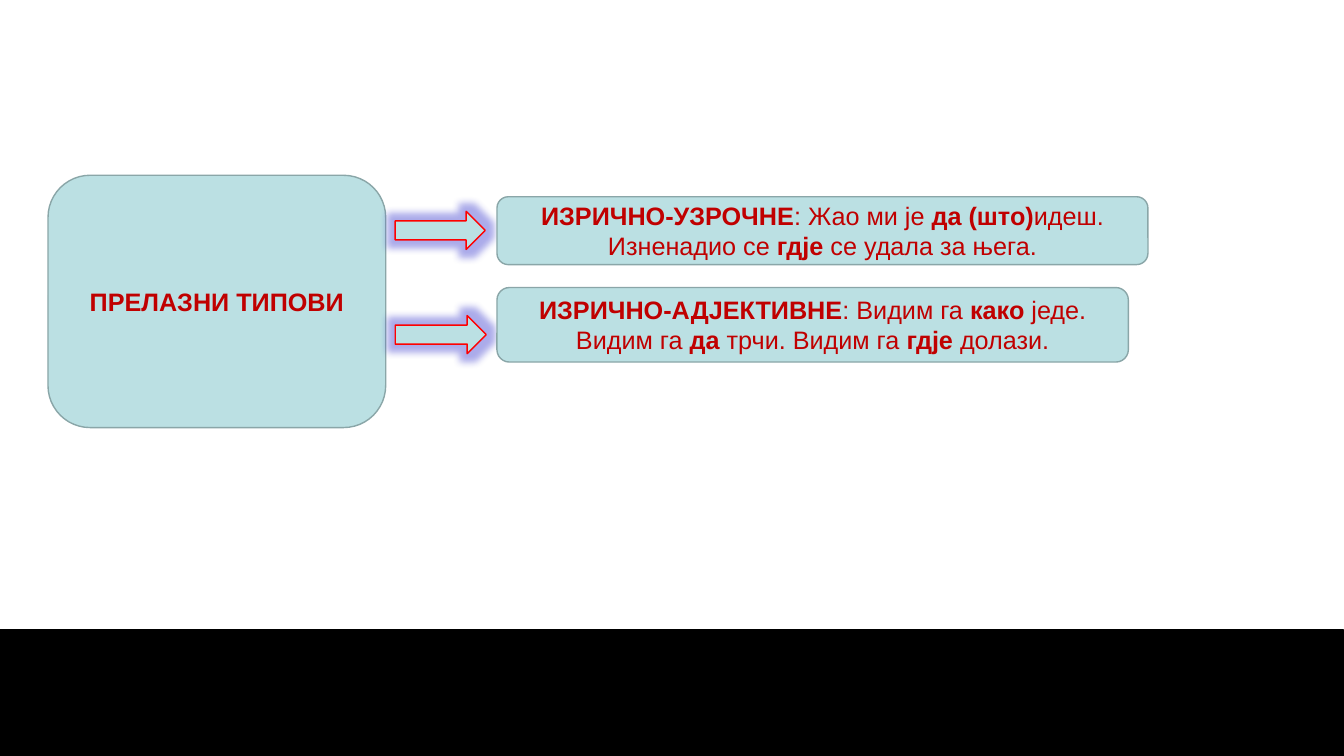
from lxml.etree import SubElement
from pptx import Presentation
from pptx.dml.color import RGBColor
from pptx.enum.shapes import MSO_SHAPE as Shape
from pptx.enum.text import MSO_ANCHOR as Anchor, PP_ALIGN as Align
from pptx.oxml.ns import qn
from pptx.util import Pt

COLORS = {
    "band": "000000",
    "fill": "BBE0E3",
    "border": "8AA6A8",
    "arrow": "FF0000",
    "text": "C00000",
    "glow": "2D2DCB",
}

# Each type: box top, width, height; arrow top, width; (text, bold) runs
TYPES = [
    (140.5, 465, 48.5, 151, 64.3, [
        ("ИЗРИЧНО-УЗРОЧНЕ", True),
        (": Жао ми је ", False),
        ("да (што)", True),
        ("идеш. Изненадио се ", False),
        ("гдје ", True),
        ("се удала за њега.", False),
    ]),
    (205.4, 451, 53.2, 225.4, 65, [
        ("ИЗРИЧНО-АДЈЕКТИВНЕ", True),
        (": Видим га ", False),
        ("како ", True),
        ("једе. Видим га ", False),
        ("да ", True),
        ("трчи. Видим га ", False),
        ("гдје ", True),
        ("долази.", False),
    ]),
]


def rgb(name):
    return RGBColor.from_string(COLORS[name])


def add_figure(slide, kind, left, top, width, height, fill, border, weight=1):
    figure = slide.shapes.add_shape(kind, Pt(left), Pt(top), Pt(width), Pt(height))
    figure.shadow.inherit = False
    figure.fill.solid()
    figure.fill.fore_color.rgb = rgb(fill)
    figure.line.color.rgb = rgb(border)
    figure.line.width = Pt(weight)
    return figure


def add_text_box(slide, left, top, width, height, runs):
    box = add_figure(slide, Shape.ROUNDED_RECTANGLE, left, top, width, height,
                     "fill", "border")
    frame = box.text_frame
    frame.word_wrap = True
    frame.vertical_anchor = Anchor.MIDDLE
    paragraph = frame.paragraphs[0]
    paragraph.alignment = Align.CENTER
    for text, bold in runs:
        run = paragraph.add_run()
        run.text = text
        run.font.name = "Arial"
        run.font.size = Pt(18)
        run.font.bold = bold
        run.font.color.rgb = rgb("text")


def add_glowing_arrow(slide, left, top, width, height):
    arrow = add_figure(slide, Shape.RIGHT_ARROW, left, top, width, height,
                       "fill", "arrow")
    effects = arrow.element.spPr.find(qn("a:effectLst"))
    glow = SubElement(effects, qn("a:glow"), rad=str(Pt(11)))
    color = SubElement(glow, qn("a:srgbClr"), val=COLORS["glow"])
    SubElement(color, qn("a:alpha"), val="40000")


def main():
    deck = Presentation()
    deck.slide_width, deck.slide_height = Pt(960), Pt(540)
    slide = deck.slides.add_slide(deck.slide_layouts[6])

    # Black band along the bottom
    add_figure(slide, Shape.RECTANGLE, 0, 450, 960, 90, "band", "band", 0.75)

    # Heading box on the left
    add_text_box(slide, 34.3, 125.2, 241.2, 180.2, [("ПРЕЛАЗНИ ТИПОВИ", True)])

    # An arrow and an explanation for each type
    for top, width, height, arrow_top, arrow_width, runs in TYPES:
        add_glowing_arrow(slide, 282.3, arrow_top, arrow_width, 27.2)
        add_text_box(slide, 355, top, width, height, runs)

    deck.save("out.pptx")


if __name__ == "__main__":
    main()
